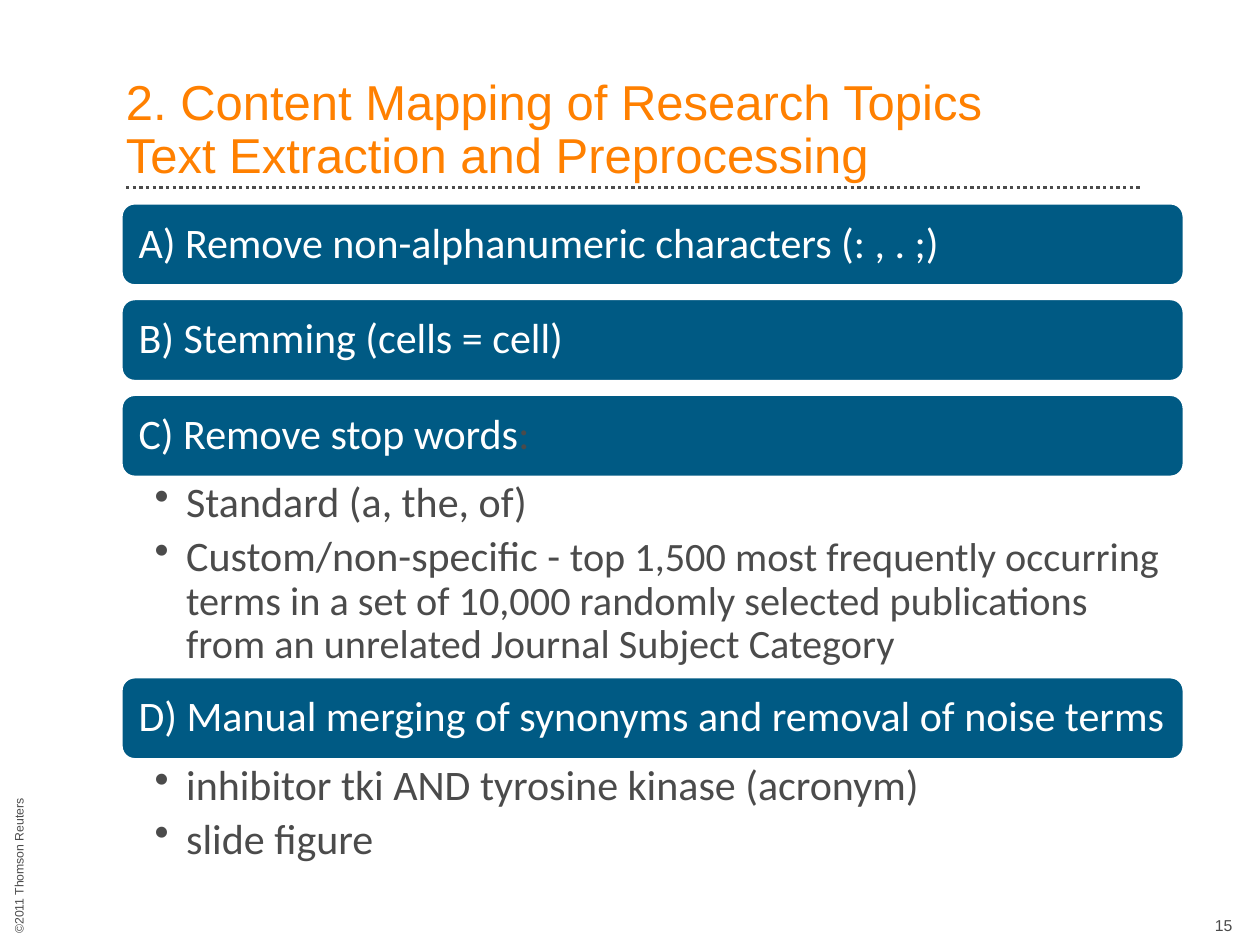
from dataclasses import dataclass

from lxml.etree import SubElement
from pptx import Presentation
from pptx.dml.color import RGBColor
from pptx.enum.dml import MSO_LINE_DASH_STYLE as Dash
from pptx.enum.shapes import MSO_CONNECTOR as Connector, MSO_SHAPE as Shape
from pptx.enum.text import MSO_ANCHOR as Anchor, PP_ALIGN as Align
from pptx.oxml.ns import qn
from pptx.util import Pt

ORANGE = RGBColor(0xFF, 0x80, 0x00)
BLUE = RGBColor(0x00, 0x5A, 0x84)
GREY = RGBColor(0x4B, 0x4B, 0x4B)
WHITE = RGBColor(0xFF, 0xFF, 0xFF)

STEP_LEFT, STEP_WIDTH, BAR_HEIGHT, BAR_GAP = 69.1, 607.7, 47.5, 7.2
FIRST_BAR_TOP = 115.9


@dataclass(frozen=True)
class Span:
    text: str
    color: RGBColor = GREY
    size: float = 24
    font: str = "Calibri"


@dataclass(frozen=True)
class Step:
    heading: tuple[Span, ...]
    bullets: tuple[tuple[Span, ...], ...] = ()
    bullets_height: float = BAR_GAP


STEPS = (
    Step((Span("A) Remove non-alphanumeric characters (: , . ;)", WHITE),)),
    Step((Span("B) Stemming (cells = cell)", WHITE),)),
    Step(
        (Span("C) Remove stop words", WHITE), Span(":")),
        (
            (Span("Standard (a, the, of)"),),
            (
                Span("Custom/non-specific - "),
                Span(
                    "top 1,500 most frequently occurring terms in a set of "
                    "10,000 randomly selected publications from an unrelated "
                    "Journal Subject Category",
                    size=23,
                ),
            ),
        ),
        113.9,
    ),
    Step(
        (Span("D) Manual merging of synonyms and removal of noise terms", WHITE),),
        (
            (Span("inhibitor tki AND tyrosine kinase (acronym)"),),
            (Span("slide figure"),),
        ),
        64,
    ),
)


def set_frame(frame, insets: tuple[float, ...], anchor=Anchor.TOP) -> None:
    """Apply wrapping, anchoring and left, top, right, bottom insets."""
    left, top, right, bottom = insets
    formats = {
        "word_wrap": True,
        "vertical_anchor": anchor,
        "margin_left": Pt(left),
        "margin_top": Pt(top),
        "margin_right": Pt(right),
        "margin_bottom": Pt(bottom),
    }
    for name, value in formats.items():
        setattr(frame, name, value)


def add_spans(paragraph, spans: tuple[Span, ...]) -> None:
    for span in spans:
        run = paragraph.add_run()
        run.text = span.text
        formats = {"name": span.font, "size": Pt(span.size)}
        for name, value in formats.items():
            setattr(run.font, name, value)
        run.font.color.rgb = span.color


def add_text(slide, box: tuple[float, ...], insets: tuple[float, ...],
             anchor=Anchor.TOP):
    textbox = slide.shapes.add_textbox(*map(Pt, box))
    set_frame(textbox.text_frame, insets, anchor)
    return textbox


def add_title(slide) -> None:
    title = add_text(slide, (72, 39.6, 580.3, 65.5), (0, 0, 0, 0), Anchor.BOTTOM)
    paragraph = title.text_frame.paragraphs[0]
    paragraph.line_spacing = 0.9
    add_spans(paragraph, (Span("2. Content Mapping of Research Topics",
                               ORANGE, 28, "Arial"),))
    paragraph.add_line_break()
    add_spans(paragraph, (Span("Text Extraction and Preprocessing",
                               ORANGE, 28, "Arial"),))
    rule = slide.shapes.add_connector(
        Connector.STRAIGHT, Pt(72), Pt(107.3), Pt(652.3), Pt(107.3))
    rule.line.color.rgb = GREY
    rule.line.width = Pt(1.9)
    rule.line.dash_style = Dash.ROUND_DOT
    SubElement(rule.line._get_or_add_ln().getparent(), qn("a:effectLst"))


def add_footer(slide) -> None:
    copyright_line = add_text(slide, (-54, 464.4, 129.6, 8.6), (0, 0, 14.4, 0))
    copyright_line.rotation = 270
    add_spans(copyright_line.text_frame.paragraphs[0],
              (Span("©2011 Thomson Reuters", size=7, font="Arial"),))
    page = add_text(slide, (684.7, 519.8, 26.6, 18), (7.2, 3.6, 7.2, 3.6))
    number = page.text_frame.paragraphs[0]
    number.alignment = Align.RIGHT
    add_spans(number, (Span("15", size=9, font="Arial"),))


def add_bar(slide, top: float, heading: tuple[Span, ...]) -> None:
    bar = slide.shapes.add_shape(
        Shape.ROUNDED_RECTANGLE,
        *map(Pt, (STEP_LEFT, top, STEP_WIDTH, BAR_HEIGHT)))
    bar.shadow.inherit = False
    bar.fill.solid()
    bar.fill.fore_color.rgb = BLUE
    bar.line.color.rgb = WHITE
    bar.line.width = Pt(2)
    set_frame(bar.text_frame, (7.8, 5, 7, 5), Anchor.MIDDLE)
    paragraph = bar.text_frame.paragraphs[0]
    paragraph.alignment = Align.LEFT
    paragraph.line_spacing = 0.9
    add_spans(paragraph, heading)


def add_bullets(slide, top: float, step: Step) -> None:
    box = (STEP_LEFT, top, STEP_WIDTH, step.bullets_height)
    frame = add_text(slide, box, (19.3, 2.4, 13.7, 2.4)).text_frame
    for index, spans in enumerate(step.bullets):
        paragraph = frame.add_paragraph() if index else frame.paragraphs[0]
        paragraph.level = 1
        paragraph.line_spacing = 0.9
        paragraph.space_after = Pt(4.8)
        properties = paragraph._p.get_or_add_pPr()
        properties.set("marL", str(Pt(18)))
        properties.set("indent", str(Pt(-18)))
        SubElement(properties, qn("a:buChar"), char="•")
        add_spans(paragraph, spans)


def main() -> None:
    deck = Presentation()
    deck.slide_width, deck.slide_height = Pt(720), Pt(540)
    slide = deck.slides.add_slide(deck.slide_layouts[6])
    add_title(slide)
    add_footer(slide)
    top = FIRST_BAR_TOP
    for step in STEPS:
        add_bar(slide, top, step.heading)
        top += BAR_HEIGHT
        if step.bullets:
            add_bullets(slide, top, step)
        top += step.bullets_height
    deck.save("out.pptx")


if __name__ == "__main__":
    main()
